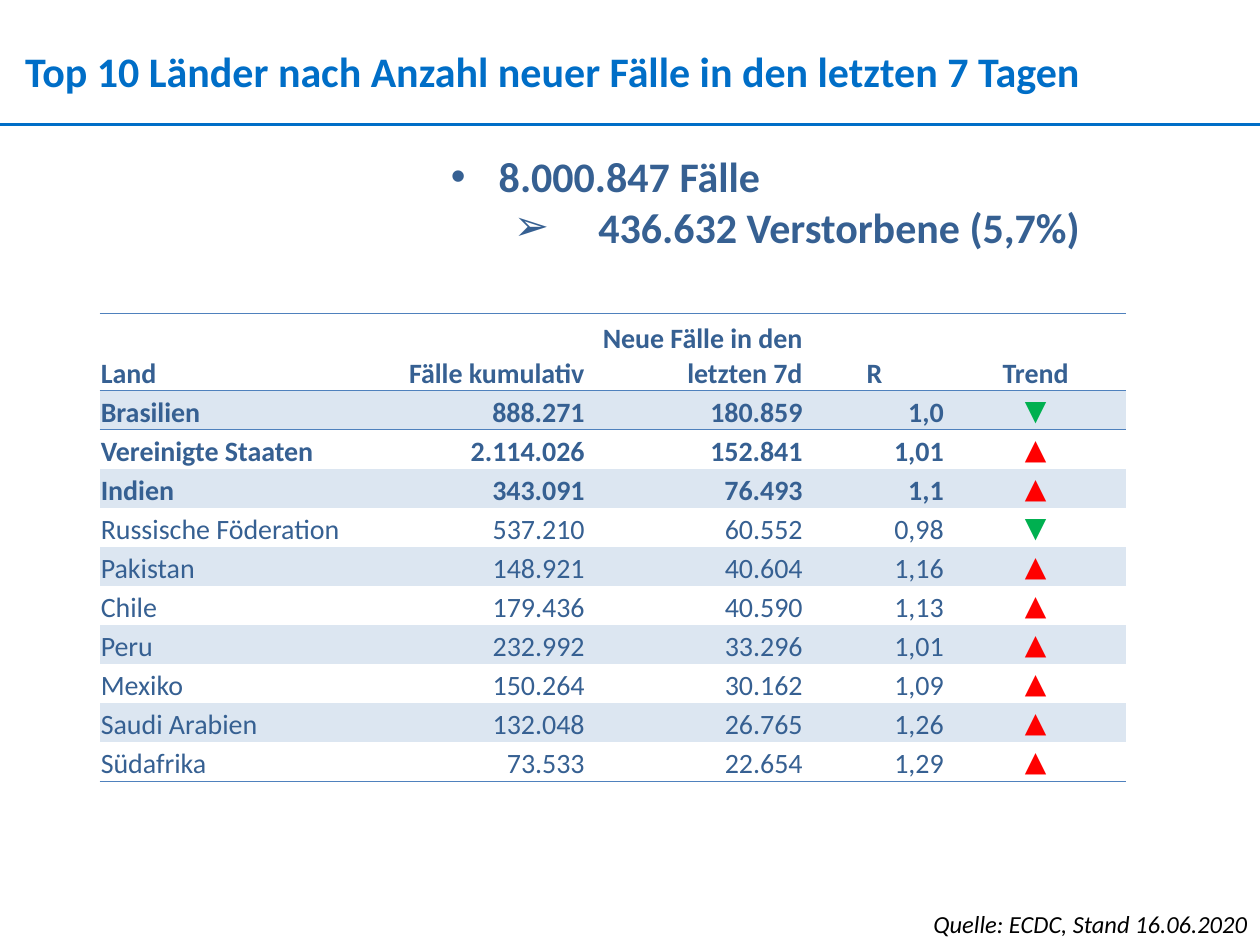
from lxml import etree
from pptx import Presentation
from pptx.dml.color import RGBColor
from pptx.enum.shapes import MSO_CONNECTOR
from pptx.enum.text import MSO_ANCHOR, MSO_AUTO_SIZE, PP_ALIGN
from pptx.oxml.ns import qn
from pptx.util import Emu, Inches, Pt

LEFT, MID, RIGHT = PP_ALIGN.LEFT, PP_ALIGN.CENTER, PP_ALIGN.RIGHT
LOW, CENTRE = MSO_ANCHOR.BOTTOM, MSO_ANCHOR.MIDDLE
GROW = MSO_AUTO_SIZE.SHAPE_TO_FIT_TEXT
STRAIGHT = MSO_CONNECTOR.STRAIGHT

BLUE = RGBColor(0x00, 0x6E, 0xC7)
NAVY = RGBColor(0x36, 0x60, 0x92)
RULE = RGBColor(0x4F, 0x81, 0xBD)
BAND = RGBColor(0xDC, 0xE6, 0xF1)
GREEN = RGBColor(0x00, 0xB0, 0x50)
RED = RGBColor(0xFF, 0x00, 0x00)
BLACK = RGBColor(0x00, 0x00, 0x00)

FONT = "Calibri"
WIDE, HIGH = Inches(10), Inches(7.5)
PLAIN = "{2D5ABB26-0587-4C30-8999-92F81FD0307C}"  # no style, no grid

COLS = [2.41, 1.45, 1.73, 1.12, 1.44]
HEAD, ROW = 0.61, 0.31
ALIGN = [LEFT, RIGHT, RIGHT, RIGHT, MID]
TOP = 3  # leading countries in bold
TINT = {"▼": GREEN, "▲": RED}
DATA = [
    ("Land", "Fälle kumulativ", "Neue Fälle in den letzten 7d", "R", "Trend"),
    ("Brasilien", "888.271", "180.859", "1,0", "▼"),
    ("Vereinigte Staaten", "2.114.026", "152.841", "1,01", "▲"),
    ("Indien", "343.091", "76.493", "1,1", "▲"),
    ("Russische Föderation", "537.210", "60.552", "0,98", "▼"),
    ("Pakistan", "148.921", "40.604", "1,16", "▲"),
    ("Chile", "179.436", "40.590", "1,13", "▲"),
    ("Peru", "232.992", "33.296", "1,01", "▲"),
    ("Mexiko", "150.264", "30.162", "1,09", "▲"),
    ("Saudi Arabien", "132.048", "26.765", "1,26", "▲"),
    ("Südafrika", "73.533", "22.654", "1,29", "▲"),
]


def apply(thing, values):
    for name, value in values.items():
        setattr(thing, name, value)


def write(para, text, size, color, align=LEFT, **style):
    para.alignment = align
    run = para.add_run()
    run.text = text
    apply(run.font, {"name": FONT, "size": Pt(size), **style})
    run.font.color.rgb = color


def add_box(slide, x, y, w, h, **frame):
    """Place a text box by shares of the slide's size."""
    box = slide.shapes.add_textbox(
        Emu(int(x * WIDE)), Emu(int(y * HIGH)),
        Emu(int(w * WIDE)), Emu(int(h * HIGH)))
    apply(box.text_frame, {"word_wrap": True, "auto_size": GROW, **frame})
    return box.text_frame


def add_rule(slide, y):
    line = slide.shapes.add_connector(
        STRAIGHT, 0, Emu(int(y * HIGH)), WIDE, Emu(int(y * HIGH)))
    line.line.color.rgb = BLUE
    line.line.width = Pt(1.5)
    etree.SubElement(line._element.spPr, qn("a:effectLst"))


def set_bullet(para, mark, left, hang):
    props = para._p.get_or_add_pPr()
    props.set("marL", str(Inches(left)))
    props.set("indent", str(-Inches(hang)))
    etree.SubElement(props, qn("a:buFont"), typeface="Arial")
    etree.SubElement(props, qn("a:buChar"), char=mark)


def set_edge(cell, side):
    props = cell._tc.get_or_add_tcPr()
    edge = etree.SubElement(props, qn("a:" + side), w=str(Pt(0.5)))
    fill = etree.SubElement(edge, qn("a:solidFill"))
    etree.SubElement(fill, qn("a:srgbClr"), val=str(RULE))


def fill_cell(cell, row, col, text):
    head, last = row == 0, row == len(DATA) - 1
    mark = text in TINT
    apply(cell, {
        "margin_left": Inches(0.01), "margin_right": Inches(0.01),
        "margin_top": Inches(0.01), "margin_bottom": 0,
        "vertical_anchor": CENTRE if mark else LOW,
    })
    if row <= 1:
        set_edge(cell, "lnT")
    if head or last:
        set_edge(cell, "lnB")
    if row % 2:
        cell.fill.solid()
        cell.fill.fore_color.rgb = BAND
    else:
        cell.fill.background()
    align = MID if head and col == 3 else ALIGN[col]
    write(cell.text_frame.paragraphs[0], text, 16, TINT.get(text, NAVY),
          align, bold=row <= TOP)


def add_grid(slide, x, y):
    high = HEAD + ROW * (len(DATA) - 1)
    frame = slide.shapes.add_table(
        len(DATA), len(COLS), Emu(int(x * WIDE)), Emu(int(y * HIGH)),
        Inches(sum(COLS)), Inches(high))
    table = frame.table
    apply(table, {"first_row": False, "horz_banding": False})
    next(frame._element.iter(qn("a:tableStyleId"))).text = PLAIN
    for col, width in enumerate(COLS):
        table.columns[col].width = Inches(width)
    for row, line in enumerate(DATA):
        table.rows[row].height = Inches(ROW if row else HEAD)
        for col, text in enumerate(line):
            fill_cell(table.cell(row, col), row, col, text)


def main():
    deck = Presentation()
    apply(deck, {"slide_width": WIDE, "slide_height": HIGH})
    slide = deck.slides.add_slide(deck.slide_layouts[6])

    # Country table
    add_grid(slide, 0.079, 0.332)

    # Title and rule
    title = add_box(slide, 0.02, 0.048, 0.963, 0.053, margin_left=0,
                    margin_right=0, margin_top=0, margin_bottom=0)
    write(title.paragraphs[0],
          "Top 10 Länder nach Anzahl neuer Fälle in den letzten 7 Tagen",
          24, BLUE, bold=True)
    add_rule(slide, 0.132)

    # World totals
    total = add_box(slide, 0.348, 0.153, 0.525, 0.121)
    cases, deaths = total.paragraphs[0], total.add_paragraph()
    deaths.level = 1
    write(cases, "8.000.847 Fälle", 24, NAVY, bold=True)
    write(deaths, "436.632 Verstorbene (5,7%)", 24, NAVY, bold=True)
    set_bullet(cases, "•", 0.38, 0.38)
    set_bullet(deaths, "➢", 1.17, 0.67)

    # Source note
    note = add_box(slide, 0.646, 0.955, 0.354, 0.045)
    write(note.paragraphs[0], "Quelle: ECDC, Stand 16.06.2020", 14, BLACK,
          RIGHT, italic=True)

    deck.save("out.pptx")


if __name__ == "__main__":
    main()
